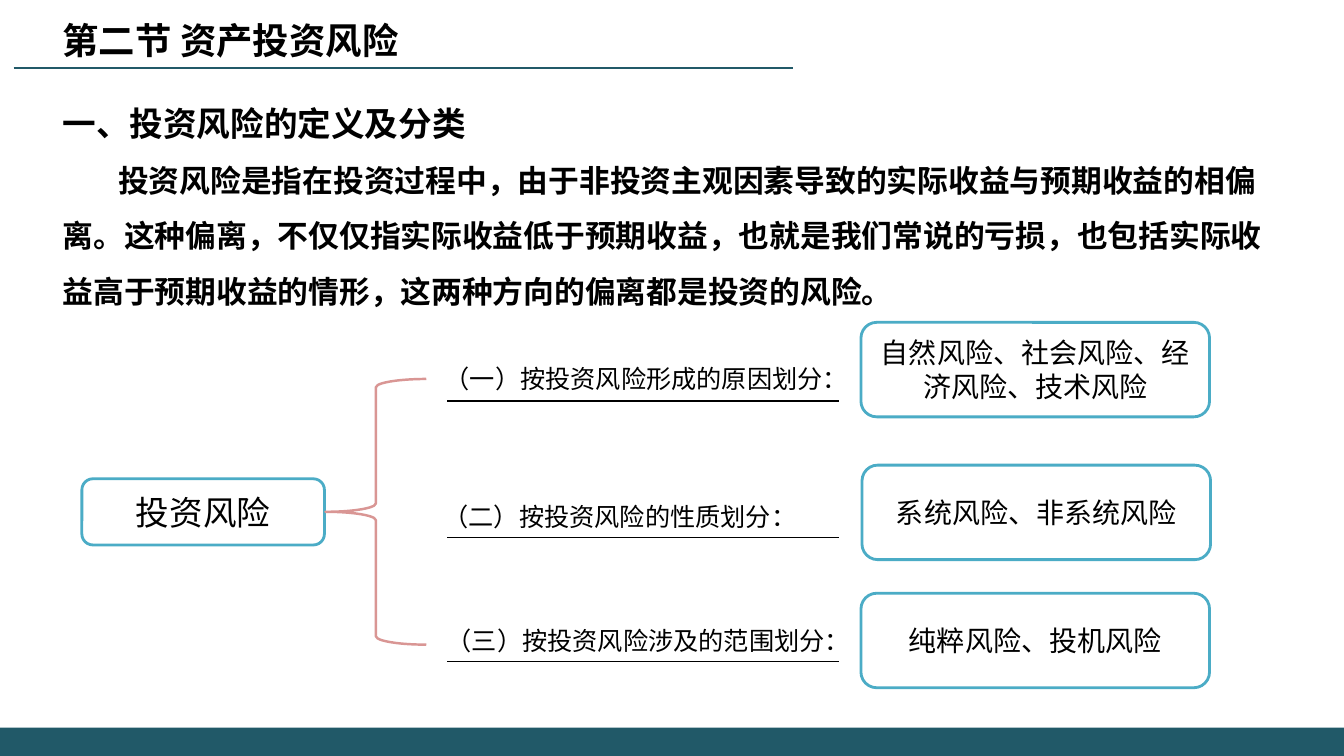
"""Build the slide on the definition and classes of investment risk."""
from lxml.etree import SubElement
from pptx import Presentation
from pptx.dml.color import RGBColor
from pptx.enum.shapes import MSO_CONNECTOR as Link, MSO_SHAPE as Form
from pptx.enum.text import MSO_ANCHOR as Anchor, MSO_AUTO_SIZE as Fit, PP_ALIGN as Align
from pptx.oxml.ns import qn
from pptx.util import Pt

PX = 9525
TEAL, AQUA, ROSE = "215968", "4BACC6", "D99694"
BLACK, WHITE = "000000", "FFFFFF"
SANS = "Noto Sans CJK SC"

ROWS = [
    (414, 341, 382, "（一）按投资风险形成的原因划分：",
     820, 307, "自然风险、社会风险、经济风险、技术风险"),
    (413, 473, 512, "（二）按投资风险的性质划分：",
     821, 443, "系统风险、非系统风险"),
    (416, 591, 630, "（三）按投资风险涉及的范围划分：",
     820, 565, "纯粹风险、投机风险"),
]


def scale(*nums):
    return [num * PX for num in nums]


def tint(code):
    return RGBColor.from_string(code)


def add_run(para, text, size, face=SANS, bold=False):
    run = para.add_run()
    run.text = text
    font = run.font
    font.size, font.bold, font.name = Pt(size), bold, face
    font.color.rgb = tint(BLACK)
    SubElement(font._element, qn("a:ea"), typeface=SANS)


def set_frame(frame, anchor=Anchor.TOP):
    frame.word_wrap = True
    frame.auto_size = Fit.NONE
    frame.vertical_anchor = anchor


def place(shape, box):
    shape.left, shape.top, shape.width, shape.height = scale(*box)
    set_frame(shape.text_frame)


def add_title(slide, box, text):
    title = slide.shapes.title
    place(title, box)
    para = title.text_frame.paragraphs[0]
    para.alignment = Align.LEFT
    add_run(para, text, 26, bold=True)


def add_body(slide, box, items):
    body = slide.placeholders[1]
    place(body, box)
    frame = body.text_frame
    for num, (text, size, indent) in enumerate(items):
        para = frame.add_paragraph() if num else frame.paragraphs[0]
        para.line_spacing, para.space_before = 1.5, Pt(0)
        props = para._p.get_or_add_pPr()
        props.set("marL", "0")
        props.set("indent", str(indent * PX))
        SubElement(props, qn("a:buNone"))
        add_run(para, text, size, "Times New Roman", True)


def add_form(slide, kind, box, fill=None, line=None, width=2):
    shape = slide.shapes.add_shape(kind, *scale(*box))
    shape.shadow.inherit = False
    if fill:
        shape.fill.solid()
        shape.fill.fore_color.rgb = tint(fill)
    else:
        shape.fill.background()
    if line:
        shape.line.color.rgb = tint(line)
        shape.line.width = Pt(width)
    else:
        shape.line.fill.background()
    return shape


def add_card(slide, box, text, size):
    card = add_form(slide, Form.ROUNDED_RECTANGLE, box, WHITE, AQUA)
    set_frame(card.text_frame, Anchor.MIDDLE)
    para = card.text_frame.paragraphs[0]
    para.alignment = Align.CENTER
    add_run(para, text, size, "Calibri")


def add_label(slide, box, text):
    label = slide.shapes.add_textbox(*scale(*box))
    set_frame(label.text_frame)
    add_run(label.text_frame.paragraphs[0], text, 18)


def add_rule(slide, left, right, top, color, width):
    rule = slide.shapes.add_connector(Link.STRAIGHT, *scale(left, top, right, top))
    rule.line.color.rgb = tint(color)
    rule.line.width = Pt(width)
    SubElement(rule._element.spPr, qn("a:effectLst"))


def main():
    deck = Presentation()
    deck.slide_width, deck.slide_height = scale(1280, 720)
    slide = deck.slides.add_slide(deck.slide_layouts[1])
    add_form(slide, Form.RECTANGLE, (0, 693, 1280, 27), TEAL)
    add_rule(slide, 13, 755, 65, TEAL, 1.5)
    add_title(slide, (50, 12, 554, 52), "第二节 资产投资风险")
    add_body(slide, (50, 74, 1179, 281), [
        ("一、投资风险的定义及分类", 24, 0),
        ("投资风险是指在投资过程中，由于非投资主观因素导致的实际收益与预期收益的相偏离。"
         "这种偏离，不仅仅指实际收益低于预期收益，也就是我们常说的亏损，"
         "也包括实际收益高于预期收益的情形，这两种方向的偏离都是投资的风险。", 22, 53),
    ])
    add_card(slide, (78, 456, 231, 63), "投资风险", 24)
    add_form(slide, Form.LEFT_BRACE, (310, 361, 96, 253), line=ROSE, width=1.75)
    for left, top, base, label, side, head, kinds in ROWS:
        add_label(slide, (left, top, 420, 38), label)
        add_rule(slide, 426, 799, base, BLACK, 1)
        add_card(slide, (side, head, 332, 90), kinds, 20)
    deck.save("out.pptx")


if __name__ == "__main__":
    main()
